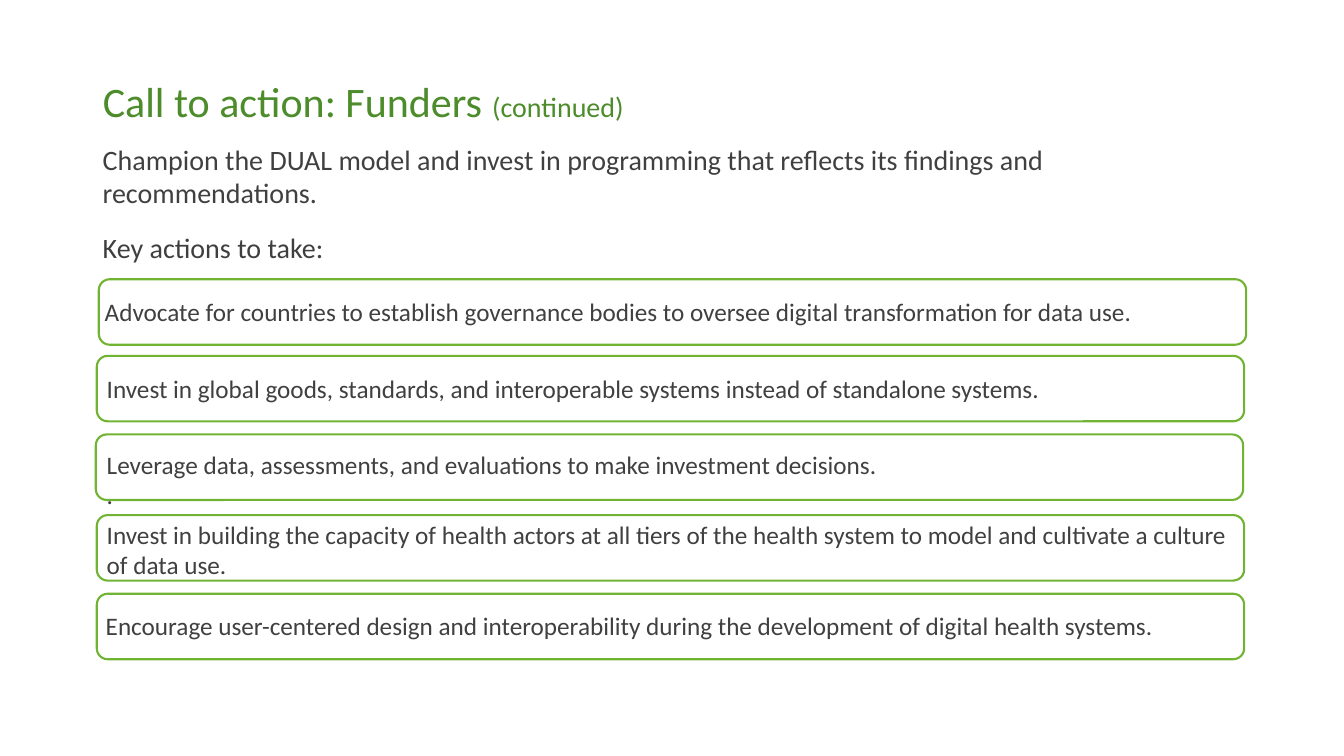
from dataclasses import dataclass

from pptx import Presentation
from pptx import util as u
from pptx.dml.color import RGBColor
from pptx.enum import shapes, text


@dataclass(frozen=True)
class Theme:
    font: str = "Calibri"
    title: str = "4C8C2B"
    body: str = "404041"
    dark: str = "3F3F41"
    border: str = "71B333"
    title_size: int = 30
    lead_size: int = 20
    card_size: int = 18
    border_width: float = 1.5


class Deck:
    def __init__(self, prs, theme):
        self.theme = theme
        self.s = prs.slides.add_slide(prs.slide_layouts[5])

    def place(self, sp, box):
        for name, value in zip(("left", "top", "width", "height"), box):
            setattr(sp, name, u.Inches(value))

    def frame(self, sp, anchor):
        tf = sp.text_frame
        values = {"word_wrap": True, "auto_size": text.MSO_AUTO_SIZE.NONE,
                  "vertical_anchor": anchor}
        for name, value in values.items():
            setattr(tf, name, value)
        return tf

    def run(self, p, content, size, color):
        r = p.add_run()
        r.text = content
        values = {"name": self.theme.font, "size": u.Pt(size), "bold": False}
        for name, value in values.items():
            setattr(r.font, name, value)
        r.font.color.rgb = RGBColor.from_string(color)

    def title(self, box, main, suffix):
        t = self.theme
        sp = self.s.shapes.title
        self.place(sp, box)
        p = self.frame(sp, text.MSO_ANCHOR.MIDDLE).paragraphs[0]
        values = {"alignment": text.PP_ALIGN.LEFT, "line_spacing": 0.9,
                  "space_before": u.Pt(0)}
        for name, value in values.items():
            setattr(p, name, value)
        self.run(p, main, t.title_size, t.title)
        self.run(p, suffix, t.lead_size, t.title)

    def textbox(self, box, lines, size):
        sp = self.s.shapes.add_textbox(*map(u.Inches, box))
        tf = self.frame(sp, text.MSO_ANCHOR.TOP)
        for i, (content, color) in enumerate(lines):
            p = tf.paragraphs[0] if i == 0 else tf.add_paragraph()
            self.run(p, content, size, color)

    def card(self, box):
        sp = self.s.shapes.add_shape(
            shapes.MSO_SHAPE.ROUNDED_RECTANGLE, *map(u.Inches, box))
        sp.shadow.inherit = False
        sp.fill.background()
        sp.line.color.rgb = RGBColor.from_string(self.theme.border)
        sp.line.width = u.Pt(self.theme.border_width)


def main():
    prs = Presentation()
    prs.slide_width, prs.slide_height = u.Inches(13.33), u.Inches(7.5)
    t = Theme()
    deck = Deck(prs, t)

    deck.title((0.92, 0.75, 9.16, 0.56), "Call to action: Funders ", "(continued)")
    deck.textbox((0.92, 1.36, 11.5, 0.77), [
        ("Champion the DUAL model and invest in programming that reflects its findings and", t.body),
        ("recommendations.", t.body),
    ], t.lead_size)
    deck.textbox((0.92, 2.24, 11.38, 0.74), [("Key actions to take:", t.dark)], t.lead_size)

    width, card_height = 11.38, 0.65
    actions = [
        ((0.98, 2.77), (0.94, 2.89, 11.59, 0.4), [
            ("Advocate for countries to establish governance bodies to oversee "
             "digital transformation for data use.", t.body)]),
        ((0.96, 3.53), (0.96, 3.65, width, 0.4), [
            ("Invest in global goods, standards, and interoperable systems "
             "instead of standalone systems.", t.body)]),
        ((0.95, 4.31), (0.96, 4.41, width, 0.71), [
            ("Leverage data, assessments, and evaluations to make investment decisions.", t.body),
            (".", t.dark)]),
        ((0.96, 5.11), (0.96, 5.1, width, 0.71), [
            ("Invest in building the capacity of health actors at all tiers of the "
             "health system to model and cultivate a culture of data use.", t.body)]),
        ((0.96, 5.89), (0.95, 6.01, width, 0.4), [
            ("Encourage user-centered design and interoperability during the "
             "development of digital health systems.", t.body)]),
    ]
    for corner, text_box, lines in actions:
        deck.card((*corner, width, card_height))
        deck.textbox(text_box, lines, t.card_size)

    prs.save("out.pptx")


if __name__ == "__main__":
    main()
